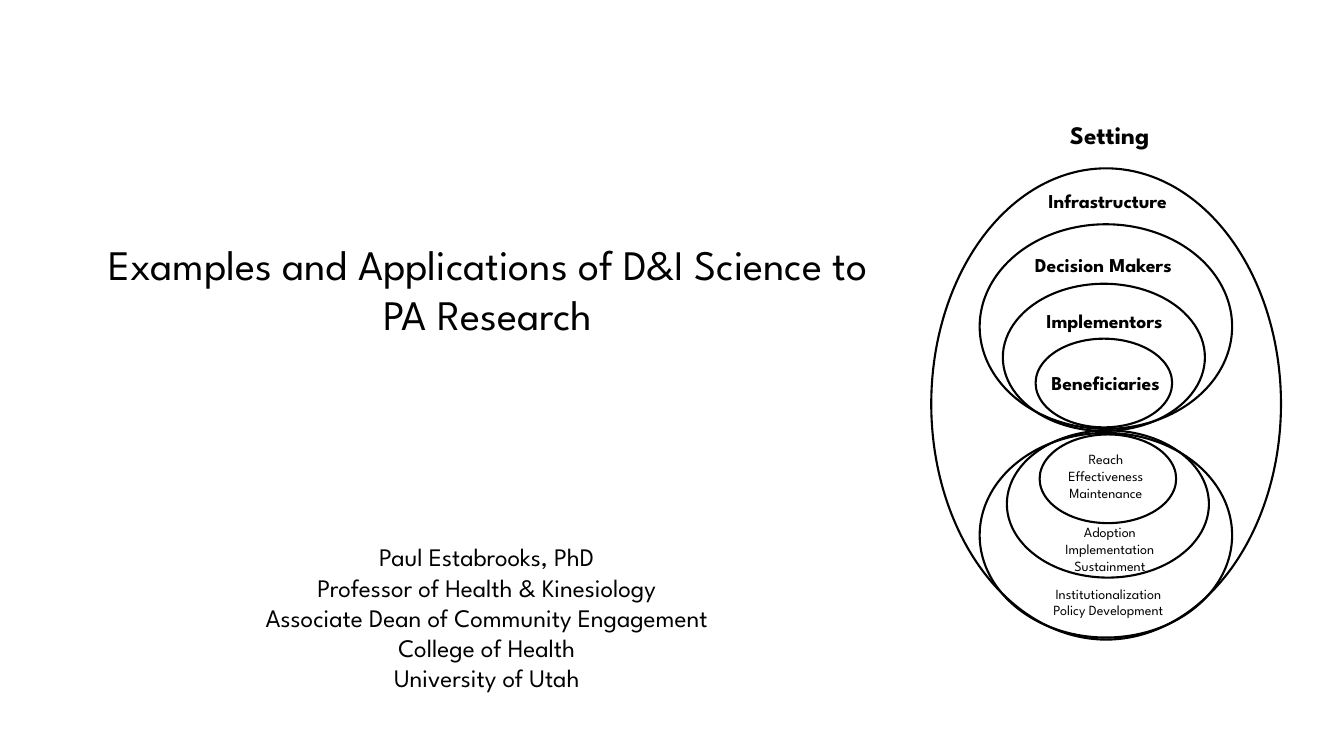
from pptx import Presentation
from pptx.dml.color import RGBColor
from pptx.enum import shapes, text
from pptx.util import Inches, Pt

THEME = {
    "font": "League Spartan",
    "ink": RGBColor(0, 0, 0),
    "paper": RGBColor(255, 255, 255),
    "outline": Pt(3),
    "title": Pt(60),
    "heading": Pt(36),
    "level": Pt(28),
    "outcome": Pt(20),
}

TITLE = ["Examples and Applications of D&I Science to PA Research"]
PRESENTER = [
    "Paul Estabrooks, PhD",
    "Professor of Health & Kinesiology",
    "Associate Dean of Community Engagement",
    "College of Health",
    "University of Utah",
]

SETTING_RING = (18.48, 3.34, 6.94, 9.35)
RING_SIZES = [(5.01, 4.06), (4.01, 2.92), (2.71, 1.76)]
PEOPLE_RINGS = [(19.44, 4.45), (19.9, 5.63), (20.55, 6.72)]
OUTCOME_RINGS = [(19.44, 8.59), (19.98, 8.54), (20.63, 8.62)]

LABELS = [
    (["Setting"], (19.5, 2.31, 5.04, 0.71), "heading", True, True),
    (["Infrastructure"], (19.46, 3.7, 5.04, 0.57), "level", True, True),
    (["Decision Makers"], (20.23, 4.97, 3.33, 0.57), "level", True, False),
    (["Implementors"], (20.52, 6.08, 2.79, 0.57), "level", True, False),
    (["Beneficiaries"], (20.63, 7.32, 2.62, 0.57), "level", True, False),
    (["Reach", "Effectiveness", "Maintenance"],
     (20.92, 8.89, 2.05, 1.11), "outcome", False, False),
    (["Adoption", "Implementation", "Sustainment"],
     (20.84, 10.34, 2.37, 1.11), "outcome", False, False),
    (["Institutionalization", "Policy Development"],
     (20.52, 11.56, 2.95, 0.77), "outcome", False, False),
]


def apply(target, values):
    for name, value in values.items():
        setattr(target, name, value)


def add_lines(parent, lines, place, size, bold=False, **frame_format):
    frame = parent.add_textbox(*map(Inches, place)).text_frame
    apply(frame, {"word_wrap": True, **frame_format})
    frame.text = "\n".join(lines)
    for paragraph in frame.paragraphs:
        paragraph.alignment = text.PP_ALIGN.CENTER
        for run in paragraph.runs:
            apply(run.font, {"name": THEME["font"], "size": THEME[size], "bold": bold})
            run.font.color.rgb = THEME["ink"]


def add_ring(parent, place):
    ring = parent.add_shape(shapes.MSO_SHAPE.OVAL, *map(Inches, place))
    ring.shadow.inherit = False
    ring.fill.background()
    ring.line.color.rgb = THEME["ink"]
    ring.line.width = THEME["outline"]


def main():
    deck = Presentation()
    apply(deck, {"slide_width": Inches(26.67), "slide_height": Inches(15)})
    slide = deck.slides.add_slide(deck.slide_layouts[6])
    slide.background.fill.solid()
    slide.background.fill.fore_color.rgb = THEME["paper"]

    margins = {f"margin_{side}": Inches(0.06) for side in ("left", "top", "right", "bottom")}
    title_format = {
        **margins,
        "margin_bottom": Inches(1.08),
        "vertical_anchor": text.MSO_ANCHOR.BOTTOM,
    }
    add_lines(slide.shapes, TITLE, (1.65, 5.62, 16.06, 2.19), "title", **title_format)
    add_lines(slide.shapes, PRESENTER, (1.63, 10.69, 16.06, 1.74), "heading", **margins)

    diagram = slide.shapes.add_group_shape().shapes
    add_ring(diagram, SETTING_RING)
    for corners in (PEOPLE_RINGS, OUTCOME_RINGS):
        for corner, ring_size in zip(corners, RING_SIZES):
            add_ring(diagram, corner + ring_size)
    for lines, place, size, bold, wraps in LABELS:
        add_lines(diagram, lines, place, size, bold, word_wrap=wraps,
                  auto_size=text.MSO_AUTO_SIZE.SHAPE_TO_FIT_TEXT)

    deck.save("out.pptx")


if __name__ == "__main__":
    main()
